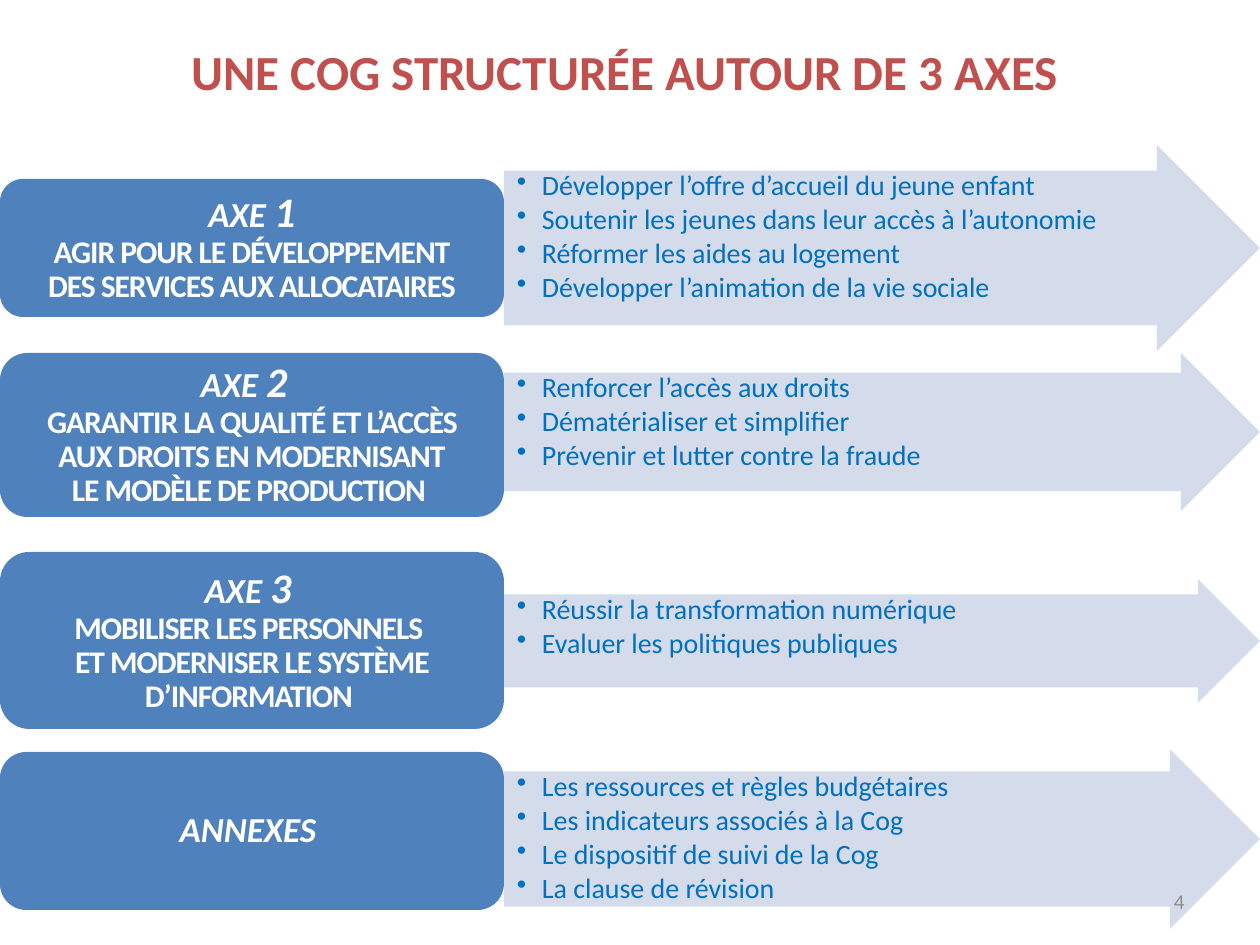
from dataclasses import dataclass

from lxml.etree import SubElement
from pptx import Presentation
from pptx.dml.color import RGBColor
from pptx.enum.shapes import MSO_SHAPE
from pptx.enum.text import MSO_ANCHOR, PP_ALIGN
from pptx.oxml.ns import qn
from pptx.util import Emu, Pt

RED = RGBColor(0xC0, 0x50, 0x4D)
BLUE = RGBColor(0x4F, 0x81, 0xBD)
PALE_BLUE = RGBColor(0xD0, 0xD8, 0xE8)
TEXT_BLUE = RGBColor(0x00, 0x70, 0xC0)
WHITE = RGBColor(0xFF, 0xFF, 0xFF)
GREY = RGBColor(0x8C, 0x8C, 0x8C)

FONT = "Calibri"
PX_PER_INCH = 126
LABEL_WIDTH = 504
SLIDE_WIDTH, SLIDE_HEIGHT = 1260, 945


@dataclass(frozen=True)
class Axis:
    heading: tuple[str, ...]  # plain, enlarged number, trailing text
    subject: str
    label_top: int
    label_height: int
    arrow_top: int
    arrow_height: int
    actions: tuple[str, ...]


AXES = (
    Axis(("AXE ", "1"), "AGIR POUR LE DÉVELOPPEMENT\nDES SERVICES AUX ALLOCATAIRES",
         179, 138, 145, 206,
         ("Développer l’offre d’accueil du jeune enfant",
          "Soutenir les jeunes dans leur accès à l’autonomie",
          "Réformer les aides au logement",
          "Développer l’animation de la vie sociale")),
    Axis(("AXE ", "2", "  "),
         "GARANTIR LA QUALITÉ ET L’ACCÈS AUX DROITS EN MODERNISANT\n"
         "LE MODÈLE DE PRODUCTION ",
         353, 164, 353, 158,
         ("Renforcer l’accès aux droits",
          "Dématérialiser et simplifier",
          "Prévenir et lutter contre la fraude")),
    Axis(("AXE ", "3", " "),
         "MOBILISER LES PERSONNELS \nET MODERNISER LE SYSTÈME D’INFORMATION ",
         552, 177, 579, 124,
         ("Réussir la transformation numérique",
          "Evaluer les politiques publiques")),
    Axis(("ANNEXES ",), "",
         752, 158, 749, 180,
         ("Les ressources et règles budgétaires",
          "Les indicateurs associés à la Cog",
          "Le dispositif de suivi de la Cog",
          "La clause de révision")),
)


def px(length: int) -> Emu:
    return Emu(round(length * 914400 / PX_PER_INCH))


def style(paragraph, size: int, color: RGBColor, align=PP_ALIGN.LEFT,
          bold: bool = False, italic: bool = False) -> None:
    paragraph.alignment = align
    font = paragraph.font
    font.name, font.size = FONT, Pt(size)
    font.bold, font.italic = bold, italic
    font.color.rgb = color


def set_margins(frame, horizontal: int, vertical: int) -> None:
    frame.margin_left = frame.margin_right = px(horizontal)
    frame.margin_top = frame.margin_bottom = px(vertical)


def add_block(slide, preset, left: int, top: int, width: int, height: int,
              color: RGBColor):
    block = slide.shapes.add_shape(preset, px(left), px(top), px(width), px(height))
    block.shadow.inherit = False
    block.fill.solid()
    block.fill.fore_color.rgb = color
    block.line.fill.background()
    block.text_frame.word_wrap = True
    return block


def add_text(slide, text: str, left: int, top: int, width: int, height: int):
    frame = slide.shapes.add_textbox(px(left), px(top), px(width), px(height)).text_frame
    frame.word_wrap = True
    frame.vertical_anchor = MSO_ANCHOR.MIDDLE
    paragraph = frame.paragraphs[0]
    paragraph.text = text
    return paragraph


def add_arrow(slide, axis: Axis) -> None:
    arrow = add_block(slide, MSO_SHAPE.RIGHT_ARROW, LABEL_WIDTH, axis.arrow_top,
                      SLIDE_WIDTH - LABEL_WIDTH, axis.arrow_height, PALE_BLUE)
    arrow.adjustments[0], arrow.adjustments[1] = 0.75, 0.5
    fill_color = arrow.fill._xPr.find(qn("a:solidFill"))[0]
    SubElement(fill_color, qn("a:alpha"), val="90000")

    frame = arrow.text_frame
    frame.vertical_anchor = MSO_ANCHOR.TOP
    set_margins(frame, 1, 1)
    for index, action in enumerate(axis.actions):
        paragraph = frame.add_paragraph() if index else frame.paragraphs[0]
        paragraph.text = action
        paragraph.line_spacing = 0.9
        paragraph.space_after = Pt(2.1)
        properties = paragraph._p.get_or_add_pPr()
        properties.set("marL", str(px(37)))
        properties.set("indent", str(-px(25)))
        SubElement(properties, qn("a:buChar"), char="•")
        style(paragraph, 16, TEXT_BLUE)


def add_label(slide, axis: Axis) -> None:
    label = add_block(slide, MSO_SHAPE.ROUNDED_RECTANGLE, 0, axis.label_top,
                      LABEL_WIDTH, axis.label_height, BLUE)
    frame = label.text_frame
    frame.vertical_anchor = MSO_ANCHOR.MIDDLE
    set_margins(frame, 10, 5)
    heading = frame.paragraphs[0]
    heading.line_spacing = 0.9
    style(heading, 20, WHITE, PP_ALIGN.CENTER, bold=True, italic=True)
    for index, part in enumerate(axis.heading):
        run = heading.add_run()
        run.text = part
        if index == 1:
            run.font.size = Pt(24)
    if axis.subject:
        subject = frame.add_paragraph()
        subject.text = axis.subject
        subject.line_spacing = 0.9
        style(subject, 18, WHITE, PP_ALIGN.CENTER, bold=True)
        subject._p.pPr.find(qn("a:defRPr")).set("spc", "-60")


def main() -> None:
    presentation = Presentation()
    presentation.slide_width = px(SLIDE_WIDTH)
    presentation.slide_height = px(SLIDE_HEIGHT)
    slide = presentation.slides.add_slide(presentation.slide_layouts[6])

    # Title
    title = add_text(slide, "UNE COG STRUCTURÉE AUTOUR DE 3 AXES ", 0, 26, SLIDE_WIDTH, 100)
    title.line_spacing = 0.8
    style(title, 28, RED, PP_ALIGN.CENTER, bold=True)

    # Axes with their actions
    for axis in AXES:
        add_arrow(slide, axis)
        add_label(slide, axis)

    # Page number
    page_number = add_text(slide, "4", 903, 876, 294, 50)
    style(page_number, 12, GREY, PP_ALIGN.RIGHT)

    presentation.save("out.pptx")


if __name__ == "__main__":
    main()
